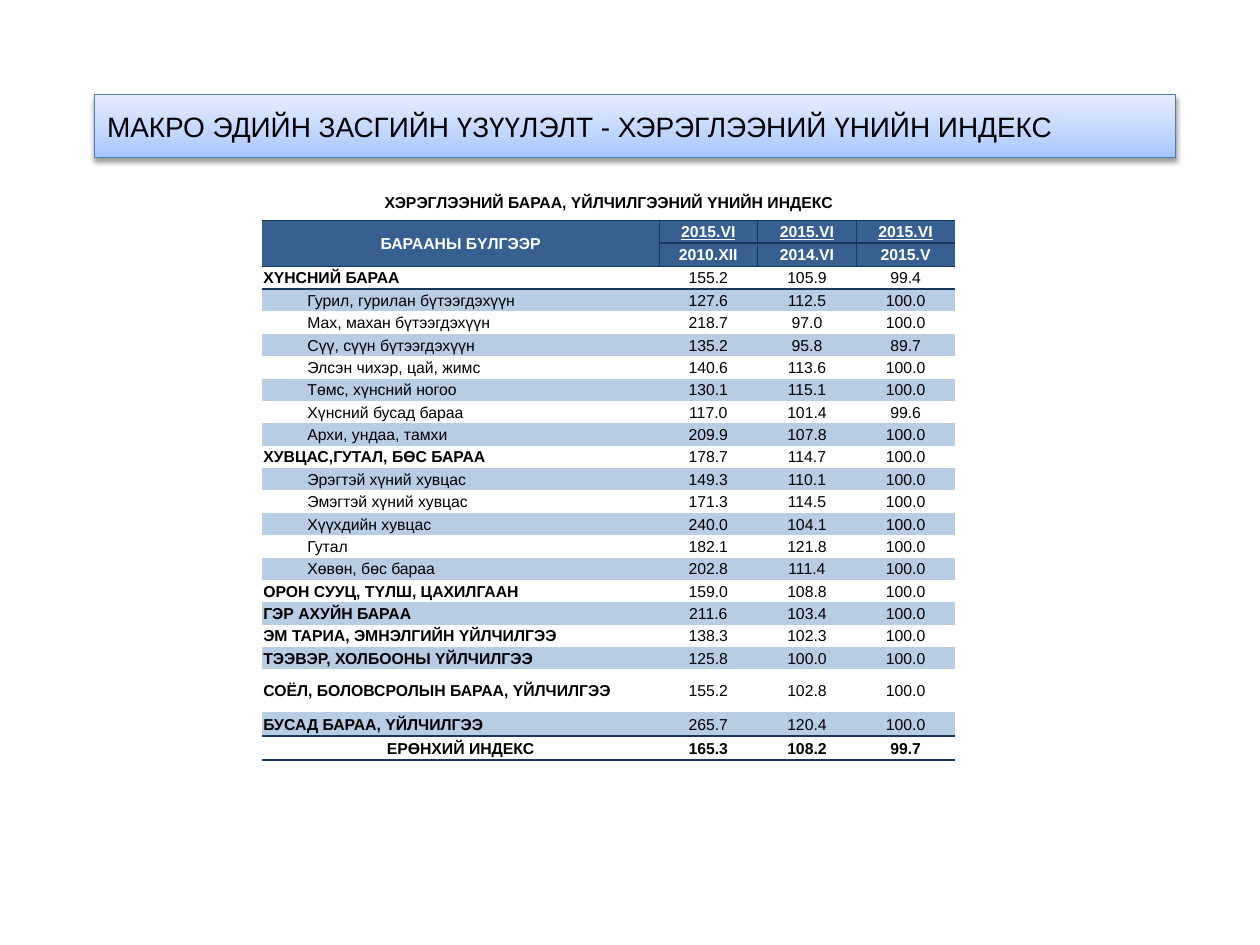
from pptx import Presentation
from pptx import util as u
from pptx.dml.color import RGBColor
from pptx.enum import text as t
from pptx.oxml import parse_xml
from pptx.oxml.ns import nsdecls

NAVY, BLUE, PALE, WHITE = "17375D", "376091", "B8CCE4", "FFFFFF"
PLAIN = "{2D5ABB26-0587-4C30-8999-92F81FD0307C}"  # no style, no grid
LEFT, MID = t.PP_ALIGN.LEFT, t.PP_ALIGN.CENTER

TITLE = "МАКРО ЭДИЙН ЗАСГИЙН ҮЗҮҮЛЭЛТ - ХЭРЭГЛЭЭНИЙ ҮНИЙН ИНДЕКС"
CAPTION = "ХЭРЭГЛЭЭНИЙ БАРАА, YЙЛЧИЛГЭЭНИЙ YНИЙН ИНДЕКС"
HEADS = [
    ("БАРААНЫ БYЛГЭЭР", "2015.VI", "2015.VI", "2015.VI"),
    ("", "2010.XII", "2014.VI", "2015.V"),
]
GOODS = [
    ("ХYНСНИЙ БАРАА", "155.2", "105.9", "99.4"),
    ("Гурил, гурилан бүтээгдэхүүн", "127.6", "112.5", "100.0"),
    ("Мах, махан бүтээгдэхүүн", "218.7", "97.0", "100.0"),
    ("Сүү, сүүн бүтээгдэхүүн", "135.2", "95.8", "89.7"),
    ("Элсэн чихэр, цай, жимс", "140.6", "113.6", "100.0"),
    ("Төмс, хүнсний ногоо", "130.1", "115.1", "100.0"),
    ("Хүнсний бусад бараа", "117.0", "101.4", "99.6"),
    ("Архи, ундаа, тамхи", "209.9", "107.8", "100.0"),
    ("ХУВЦАС,ГУТАЛ, БӨС БАРАА", "178.7", "114.7", "100.0"),
    ("Эрэгтэй хүний хувцас", "149.3", "110.1", "100.0"),
    ("Эмэгтэй хүний хувцас", "171.3", "114.5", "100.0"),
    ("Хүүхдийн хувцас", "240.0", "104.1", "100.0"),
    ("Гутал", "182.1", "121.8", "100.0"),
    ("Хөвөн, бөс бараа", "202.8", "111.4", "100.0"),
    ("ОРОН СУУЦ, ТYЛШ, ЦАХИЛГААН", "159.0", "108.8", "100.0"),
    ("ГЭР АХУЙН БАРАА", "211.6", "103.4", "100.0"),
    ("ЭМ ТАРИА, ЭМНЭЛГИЙН YЙЛЧИЛГЭЭ", "138.3", "102.3", "100.0"),
    ("ТЭЭВЭР, ХОЛБООНЫ YЙЛЧИЛГЭЭ", "125.8", "100.0", "100.0"),
    ("СОЁЛ, БОЛОВСРОЛЫН БАРАА, YЙЛЧИЛГЭЭ", "155.2", "102.8", "100.0"),
    ("БУСАД БАРАА, YЙЛЧИЛГЭЭ", "265.7", "120.4", "100.0"),
]
TOTAL = ("ЕРӨНХИЙ ИНДЕКС", "165.3", "108.2", "99.7")
ROWS = [(CAPTION, "", "", "")] + HEADS + GOODS + [TOTAL]
LAST = len(ROWS) - 1
RULES = {1, 3, LAST, LAST + 1}  # rows with a line along their top edge


def color(code):
    return RGBColor.from_string(code)


def write(frame, words, size=9, ink="000000", bold=False, under=False, align=LEFT):
    para = frame.paragraphs[0]
    para.alignment = align
    run = para.add_run()
    run.text = words
    font = run.font
    font.name, font.size, font.bold = "Arial", u.Pt(size), bold
    font.underline = under
    font.color.rgb = color(ink)


def add_title(slide):
    box = slide.shapes.title
    box.left, box.top = u.Inches(0.75), u.Inches(0.75)
    box.width, box.height = u.Inches(8.58), u.Inches(0.5)
    box.fill.gradient()
    box.fill.gradient_angle = 90
    props = box._element.spPr
    stops = props.find(".//{*}gsLst")
    marks = [(0, "A4C4FF"), (35, "BFD4FF"), (100, "E6EEFF")]
    inner = "".join(
        f'<a:gs pos="{pos * 1000}"><a:srgbClr val="{code}"/></a:gs>'
        for pos, code in marks
    )
    stops.getparent().replace(
        stops, parse_xml(f'<a:gsLst {nsdecls("a")}>{inner}</a:gsLst>')
    )
    box.line.color.rgb = color("4B7EBC")
    box.line.width = u.Pt(0.75)
    props.append(parse_xml(
        f'<a:effectLst {nsdecls("a")}><a:outerShdw blurRad="{u.Pt(3.1)}" '
        f'dist="{u.Pt(1.6)}" dir="5400000" rotWithShape="0">'
        '<a:srgbClr val="000000"><a:alpha val="38000"/></a:srgbClr>'
        "</a:outerShdw></a:effectLst>"
    ))
    frame = box.text_frame
    frame.auto_size = t.MSO_AUTO_SIZE.NONE
    frame.vertical_anchor = t.MSO_ANCHOR.MIDDLE
    frame.word_wrap = True
    write(frame, TITLE, size=16)


def add_edges(cell, row, col):
    """Draw the rules around a cell; must come before its fill."""
    head = row in (1, 2)
    end = row + (cell.span_height if cell.is_merge_origin else 1)
    edges = [
        ("L", 0.5, head and col > 0),
        ("R", 0.5, head and col < 3),
        ("T", 1, row in RULES),
        ("B", 1, end in RULES),
    ]
    for side, width, shown in edges:
        if shown:
            cell._tc.get_or_add_tcPr().append(parse_xml(
                f'<a:ln{side} {nsdecls("a")} w="{u.Pt(width)}"><a:solidFill>'
                f'<a:srgbClr val="{NAVY}"/></a:solidFill></a:ln{side}>'
            ))


def paint(cell, row):
    if row in (1, 2):
        code = BLUE
    elif row in (0, LAST):
        code = WHITE
    else:
        code = None if row % 2 else PALE
    if code:
        cell.fill.solid()
        cell.fill.fore_color.rgb = color(code)
    else:
        cell.fill.background()


def fill_cell(cell, row, col, words):
    edge = row < 3 or row == LAST
    group = col == 0 and words.isupper()
    child = col == 0 and not edge and not group
    cell.margin_left = u.Inches(0.36 if child else 0.01)
    cell.margin_right = cell.margin_top = u.Inches(0.01)
    cell.margin_bottom = 0
    cell.vertical_anchor = t.MSO_ANCHOR.MIDDLE
    add_edges(cell, row, col)
    paint(cell, row)
    if words:
        write(
            cell.text_frame, words,
            ink=WHITE if row in (1, 2) else "000000",
            bold=edge or group,
            under=row == 1 and col > 0,
            align=MID if edge or col else LEFT,
        )


def add_index(slide):
    wide, high, first = 5.5, 4.58, 3.15
    frame = slide.shapes.add_table(
        len(ROWS), 4, u.Inches(2.08), u.Inches(1.46), u.Inches(wide), u.Inches(high)
    )
    table = frame.table
    table.first_row = table.horz_banding = False
    table._tbl.tblPr.find("{*}tableStyleId").text = PLAIN
    for num, col in enumerate(table.columns):
        col.width = u.Inches((wide - first) / 3 if num else first)
    tall = {0: 0.29, 2: 0.19, LAST - 2: 0.34, LAST - 1: 0.19, LAST: 0.19}
    rest = (high - sum(tall.values())) / (len(ROWS) - len(tall))
    for num, row in enumerate(table.rows):
        row.height = u.Inches(tall.get(num, rest))
    table.cell(0, 0).merge(table.cell(0, 3))
    table.cell(1, 0).merge(table.cell(2, 0))
    for row, line in enumerate(ROWS):
        for col, words in enumerate(line):
            fill_cell(table.cell(row, col), row, col, words)


def main():
    deck = Presentation()
    deck.slide_width, deck.slide_height = u.Inches(10), u.Inches(7.5)
    slide = deck.slides.add_slide(deck.slide_layouts[5])
    add_title(slide)
    add_index(slide)
    deck.save("out.pptx")


if __name__ == "__main__":
    main()
